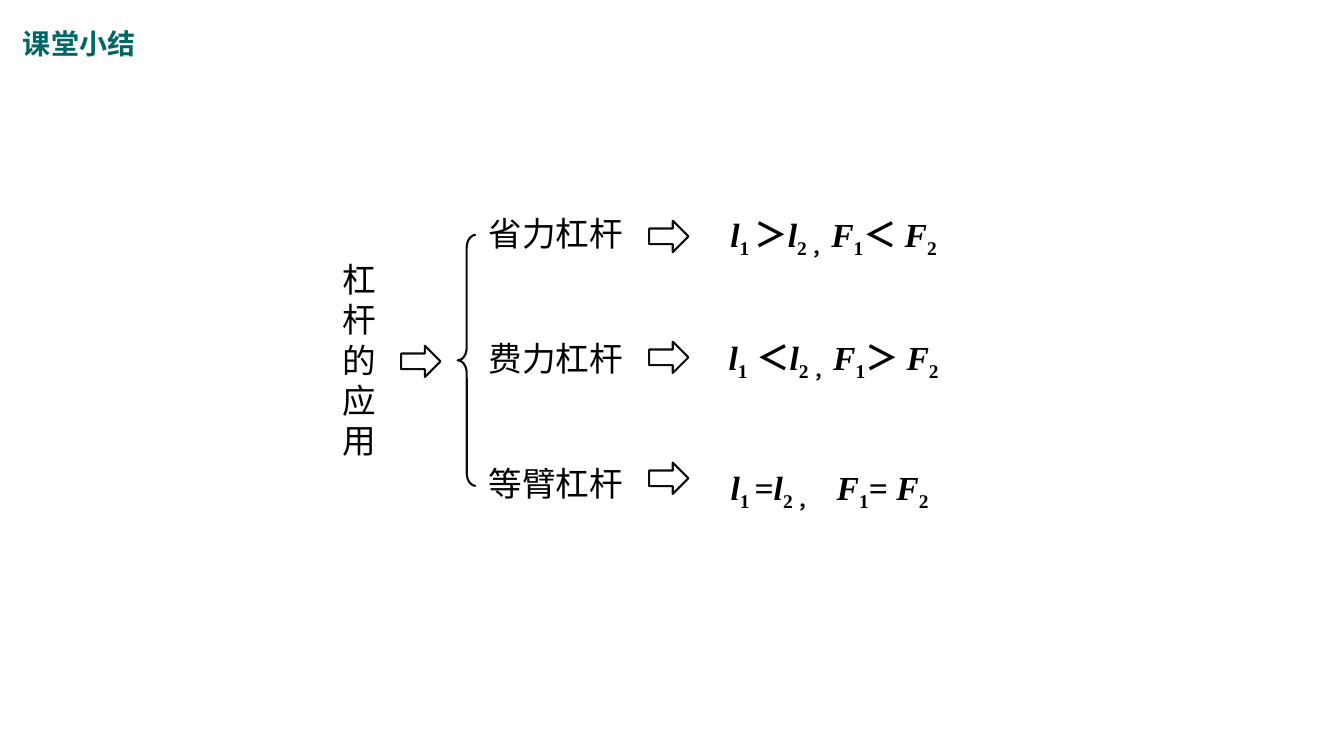
"""Build a summary slide on the three kinds of lever."""
from lxml.etree import SubElement as Sub
from pptx import Presentation
from pptx.dml.color import RGBColor
from pptx.enum.shapes import MSO_SHAPE as Form
from pptx.enum.text import PP_ALIGN as Align
from pptx.oxml.ns import qn
from pptx.util import Inches, Pt

BLACK = RGBColor(0x00, 0x00, 0x00)
INK = RGBColor(0x0D, 0x0D, 0x0D)
TEAL = RGBColor(0x00, 0x66, 0x66)
HAN = "Noto Sans CJK SC"
ROMAN = "Times New Roman"
WIDE, HIGH = Inches(13.33), Inches(7.5)
COLS, ROWS = 40, 22.5
STYLES = "ispisispis"
LEVERS = [
    ("省力杠杆", 20.64, 6.21,
     ["l", "1 ", "＞", "l", "2 ，", "F", "1", "＜ ", "F", "2"]),
    ("费力杠杆", 20.64, 9.87,
     ["l", "1", " ＜", "l", "2 ，", "F", "1", "＞ ", "F", "2"]),
    ("等臂杠杆", 20.52, 13.74,
     ["l", "1 ", "=", "l", "2 ，　", "F", "1", "= ", "F", "2"]),
]


def place(col, row, cols, rows):
    """Turn grid cells into slide lengths."""
    return (round(WIDE * col / COLS), round(HIGH * row / ROWS),
            round(WIDE * cols / COLS), round(HIGH * rows / ROWS))


def add_text(slide, box, text="", face=HAN, size=24, color=BLACK, bold=False):
    """Add a wrapped text box and return its frame."""
    frame = slide.shapes.add_textbox(*place(*box)).text_frame
    frame.word_wrap = True
    para = frame.paragraphs[0]
    if text:
        para.add_run().text = text
    font = para.font
    font.name, font.size, font.bold = face, Pt(size), bold
    font.color.rgb = color
    if face == HAN:
        props = para._p.pPr.find(qn("a:defRPr"))
        Sub(props, qn("a:ea"), typeface=HAN)
    return frame


def add_rule(slide, box, parts):
    """Add a centred formula with italic symbols and subscripts."""
    frame = add_text(slide, box, face=ROMAN, bold=True)
    frame.margin_left = frame.margin_right = 0
    para = frame.paragraphs[0]
    para.alignment = Align.CENTER
    for part, style in zip(parts, STYLES):
        run = para.add_run()
        run.text = part
        if style == "i":
            run.font.italic = True
        elif style == "s":
            run._r.get_or_add_rPr().set("baseline", "-25000")


def add_form(slide, form, box):
    """Add an unfilled outline shape."""
    shape = slide.shapes.add_shape(form, *place(*box))
    shape.shadow.inherit = False
    shape.fill.background()
    shape.line.color.rgb = INK
    shape.line.width = Pt(1.5)
    return shape


def add_arrow(slide, col, row):
    """Add a hollow arrow that points right."""
    add_form(slide, Form.RIGHT_ARROW, (col, row, 1.17, 0.93))


def main():
    """Lay out the slide and save it."""
    deck = Presentation()
    deck.slide_width, deck.slide_height = WIDE, HIGH
    slide = deck.slides.add_slide(deck.slide_layouts[6])
    add_text(slide, (0.39, 0.63, 4.26, 1.32), "课堂小结",
             "Arial", 20, TEAL, True)
    add_text(slide, (9.9, 7.56, 1.71, 6.36), "杠杆的应用")
    add_arrow(slide, 11.94, 10.29)
    brace = add_form(slide, Form.LEFT_BRACE, (13.62, 6.99, 0.54, 7.47))
    brace.adjustments[0] = 0.69
    for num, (name, col, row, parts) in enumerate(LEVERS):
        add_text(slide, (14.25, 6.18 + 3.72 * num, 5.01, 1.5), name)
        add_arrow(slide, 19.32, 6.57 + 3.6 * num)
        add_rule(slide, (col, row, 8.34, 1.5), parts)
    deck.save("out.pptx")


if __name__ == "__main__":
    main()
